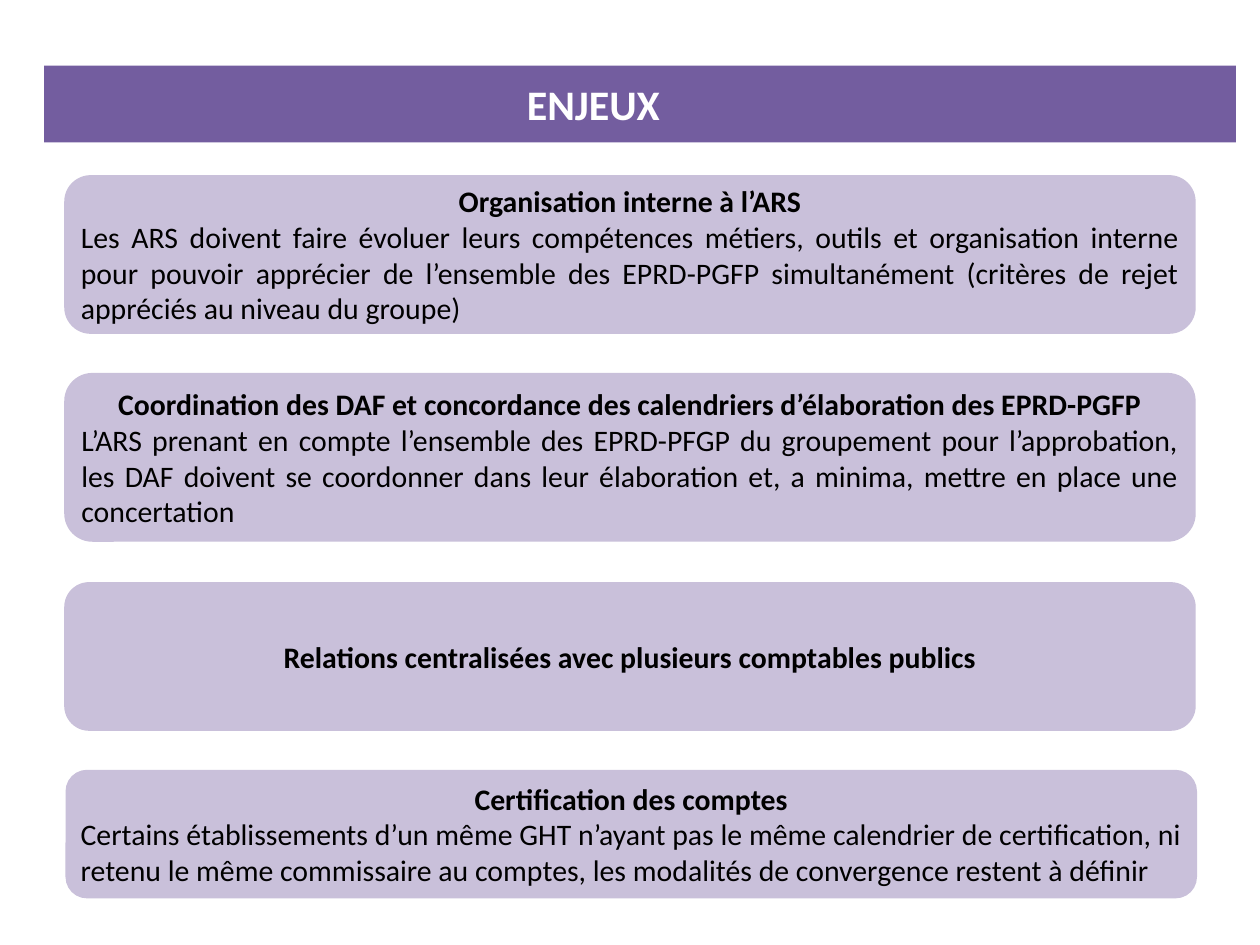
import pptx
import pptx.util
import pptx.dml.color
import pptx.enum.shapes
import pptx.enum.text

Inches = pptx.util.Inches
SHAPE = pptx.enum.shapes.MSO_SHAPE
ALIGN = pptx.enum.text.PP_ALIGN

COLORS = {"band": "735D9F", "card": "C9C0DA", "title": "FFFFFF", "text": "000000"}


class Deck:
    """Holds the style and the current slide."""

    font = "Calibri"
    title_size = 24
    text_size = 17

    def __init__(self, prs):
        self.slide = prs.slides.add_slide(prs.slide_layouts[6])

    def color(self, name):
        return pptx.dml.color.RGBColor.from_string(COLORS[name])

    def box(self, kind, left, top, width, height, fill):
        sp = self.slide.shapes.add_shape(
            kind, Inches(left), Inches(top), Inches(width), Inches(height))
        sp.shadow.inherit = False
        sp.fill.solid()
        sp.fill.fore_color.rgb = self.color(fill)
        sp.line.fill.background()
        tf = sp.text_frame
        tf.word_wrap = True
        tf.vertical_anchor = pptx.enum.text.MSO_ANCHOR.MIDDLE
        tf.margin_left = tf.margin_right = Inches(0.07)
        tf.margin_top = tf.margin_bottom = Inches(0.04)
        return tf

    def set_paragraph(self, p, text, size, color, bold, align):
        p.text = text
        p.alignment = align
        for r in p.runs:
            r.font.name = self.font
            r.font.size = pptx.util.Pt(size)
            r.font.bold = bold
            r.font.color.rgb = self.color(color)

    def title_band(self, text):
        tf = self.box(SHAPE.RECTANGLE, 0.35, 0.52, 9.46, 0.61, "band")
        # A wide right margin sets the title left of centre
        tf.margin_right = Inches(0.81)
        self.set_paragraph(tf.paragraphs[0], text, self.title_size, "title", True, ALIGN.CENTER)

    def card(self, left, top, height, heading, body):
        tf = self.box(SHAPE.ROUNDED_RECTANGLE, left, top, 8.98, height, "card")
        self.set_paragraph(tf.paragraphs[0], heading, self.text_size, "text", True, ALIGN.CENTER)
        if body:
            self.set_paragraph(tf.add_paragraph(), body, self.text_size, "text", False,
                               ALIGN.JUSTIFY)


# Left, top, height, heading, body
CARDS = [
    (0.51, 1.39, 1.26, "Organisation interne à l’ARS",
     "Les ARS doivent faire évoluer leurs compétences métiers, outils et organisation "
     "interne pour pouvoir apprécier de l’ensemble des EPRD-PGFP simultanément "
     "(critères de rejet appréciés au niveau du groupe)"),
    (0.51, 2.96, 1.34,
     "Coordination des DAF et concordance des calendriers d’élaboration des EPRD-PGFP",
     "L’ARS prenant en compte l’ensemble des EPRD-PFGP du groupement pour "
     "l’approbation, les DAF doivent se coordonner dans leur élaboration et, a minima, "
     "mettre en place une concertation"),
    (0.51, 4.62, 1.18, "Relations centralisées avec plusieurs comptables publics", None),
    (0.52, 6.11, 1.02, "Certification des comptes",
     "Certains établissements d’un même GHT n’ayant pas le même calendrier de "
     "certification, ni retenu le même commissaire au comptes, les modalités de "
     "convergence restent à définir"),
]


def main():
    prs = pptx.Presentation()
    prs.slide_width, prs.slide_height = Inches(10), Inches(7.5)
    deck = Deck(prs)

    # Title
    deck.title_band("ENJEUX")

    # Issue cards
    for card in CARDS:
        deck.card(*card)

    prs.save("out.pptx")


if __name__ == "__main__":
    main()
